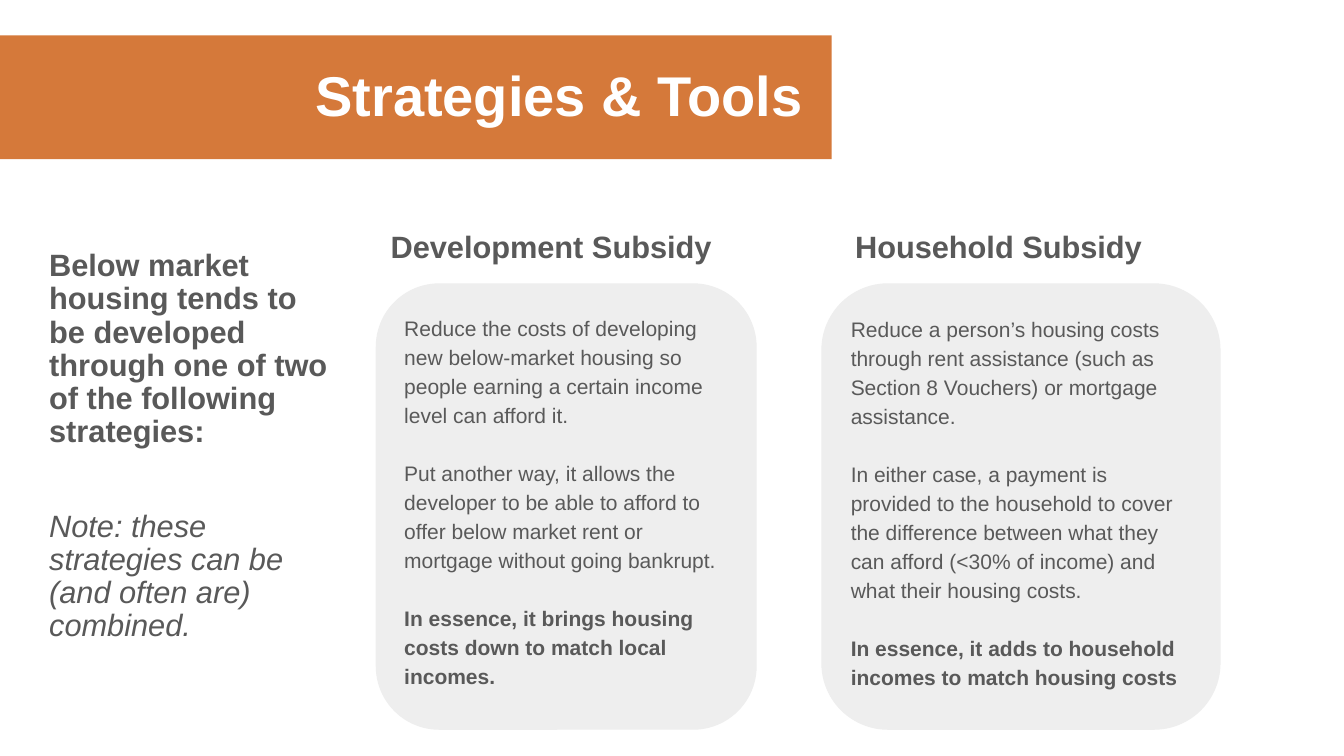
from dataclasses import dataclass

from pptx import Presentation
from pptx import util as u
from pptx.dml.color import RGBColor
from pptx.enum import shapes, text
from pptx.util import Cm


@dataclass(frozen=True)
class Theme:
    font: str = "Arial"
    ink: RGBColor = RGBColor(0x59, 0x59, 0x59)
    white: RGBColor = RGBColor(0xFF, 0xFF, 0xFF)
    band: RGBColor = RGBColor(0xD5, 0x79, 0x3A)
    card: RGBColor = RGBColor(0xEE, 0xEE, 0xEE)
    title_size: float = 40
    lead_size: float = 22
    body_size: float = 15


@dataclass(frozen=True)
class Box:
    left: float
    top: float
    width: float
    height: float

    def lengths(self) -> tuple:
        return Cm(self.left), Cm(self.top), Cm(self.width), Cm(self.height)


@dataclass(frozen=True)
class Line:
    words: str
    bold: bool = False
    italic: bool = False


@dataclass(frozen=True)
class Strategy:
    name: str
    name_box: Box
    card_box: Box
    lines: list[Line]


THEME = Theme()
BAND = Box(0, 0.89, 20.96, 3.12)
TITLE = Box(0, 1.55, 20.47, 1.83)
INTRO = Box(0.99, 6.17, 7.52, 1.35)
INTRO_LINES = [
    Line("Below market housing tends to be developed through one of two of the "
         "following strategies:", bold=True),
    Line("Note: these strategies can be (and often are) combined.", italic=True),
]
STRATEGIES = [
    Strategy("Development Subsidy", Box(9.47, 5.36, 8.84, 1.45), Box(9.47, 7.14, 9.6, 11.25), [
        Line("Reduce the costs of developing new below-market housing so people "
             "earning a certain income level can afford it."),
        Line("Put another way, it allows the developer to be able to afford to offer "
             "below market rent or mortgage without going bankrupt."),
        Line("In essence, it brings housing costs down to match local incomes.", bold=True),
    ]),
    Strategy("Household Subsidy", Box(20.96, 5.36, 8.41, 1.45), Box(20.7, 7.14, 10.06, 11.25), [
        Line("Reduce a person’s housing costs through rent assistance (such as "
             "Section 8 Vouchers) or mortgage assistance."),
        Line("In either case, a payment is provided to the household to cover the "
             "difference between what they can afford (<30% of income) and what "
             "their housing costs."),
        Line("In essence, it adds to household incomes to match housing costs", bold=True),
    ]),
]


def write(shape, lines: list[Line], size: float, spacing: float, gap: float = 0,
          align=text.PP_ALIGN.LEFT, color: RGBColor = THEME.ink,
          margin: float = 0.25, anchor=text.MSO_ANCHOR.TOP) -> None:
    """Fill a shape with paragraphs; gap is the space in points between them."""
    frame = shape.text_frame
    frame.word_wrap = True
    frame.auto_size = text.MSO_AUTO_SIZE.NONE
    frame.vertical_anchor = anchor
    frame.margin_left = frame.margin_right = Cm(0.25)
    frame.margin_top = frame.margin_bottom = Cm(margin)
    for index, line in enumerate(lines):
        paragraph = frame.add_paragraph() if index else frame.paragraphs[0]
        paragraph.text = line.words
        paragraph.alignment = align
        paragraph.line_spacing = spacing
        paragraph.space_before = u.Pt(gap if index else 0)
        font = paragraph.font
        font.name, font.size = THEME.font, u.Pt(size)
        font.bold, font.italic = line.bold, line.italic
        font.color.rgb = color


def add_panel(slide, kind, box: Box, fill: RGBColor):
    panel = slide.shapes.add_shape(kind, *box.lengths())
    panel.shadow.inherit = False
    panel.fill.solid()
    panel.fill.fore_color.rgb = fill
    panel.line.fill.background()
    return panel


def add_title(slide) -> None:
    band = add_panel(slide, shapes.MSO_SHAPE.RECTANGLE, BAND, THEME.band)
    title = slide.shapes.title
    title.left, title.top, title.width, title.height = TITLE.lengths()
    write(title, [Line("Strategies & Tools", bold=True)], THEME.title_size, 0.9,
          align=text.PP_ALIGN.RIGHT, color=THEME.white, margin=0.13,
          anchor=text.MSO_ANCHOR.BOTTOM)
    # The band lies behind the title
    title._element.addprevious(band._element)


def add_strategy(slide, strategy: Strategy) -> None:
    card = add_panel(slide, shapes.MSO_SHAPE.ROUNDED_RECTANGLE, strategy.card_box, THEME.card)
    write(card, strategy.lines, THEME.body_size, 1.15, gap=20.7)
    name = slide.shapes.add_textbox(*strategy.name_box.lengths())
    write(name, [Line(strategy.name, bold=True)], THEME.lead_size, 1.15,
          align=text.PP_ALIGN.CENTER)


def main() -> None:
    deck = Presentation()
    deck.slide_width, deck.slide_height = Cm(33.87), Cm(19.05)
    slide = deck.slides.add_slide(deck.slide_layouts.get_by_name("Title Only"))
    add_title(slide)
    intro = slide.shapes.add_textbox(*INTRO.lengths())
    write(intro, INTRO_LINES, THEME.lead_size, 0.9, gap=43.5, margin=0.13)
    for strategy in STRATEGIES:
        add_strategy(slide, strategy)
    deck.save("out.pptx")


if __name__ == "__main__":
    main()
